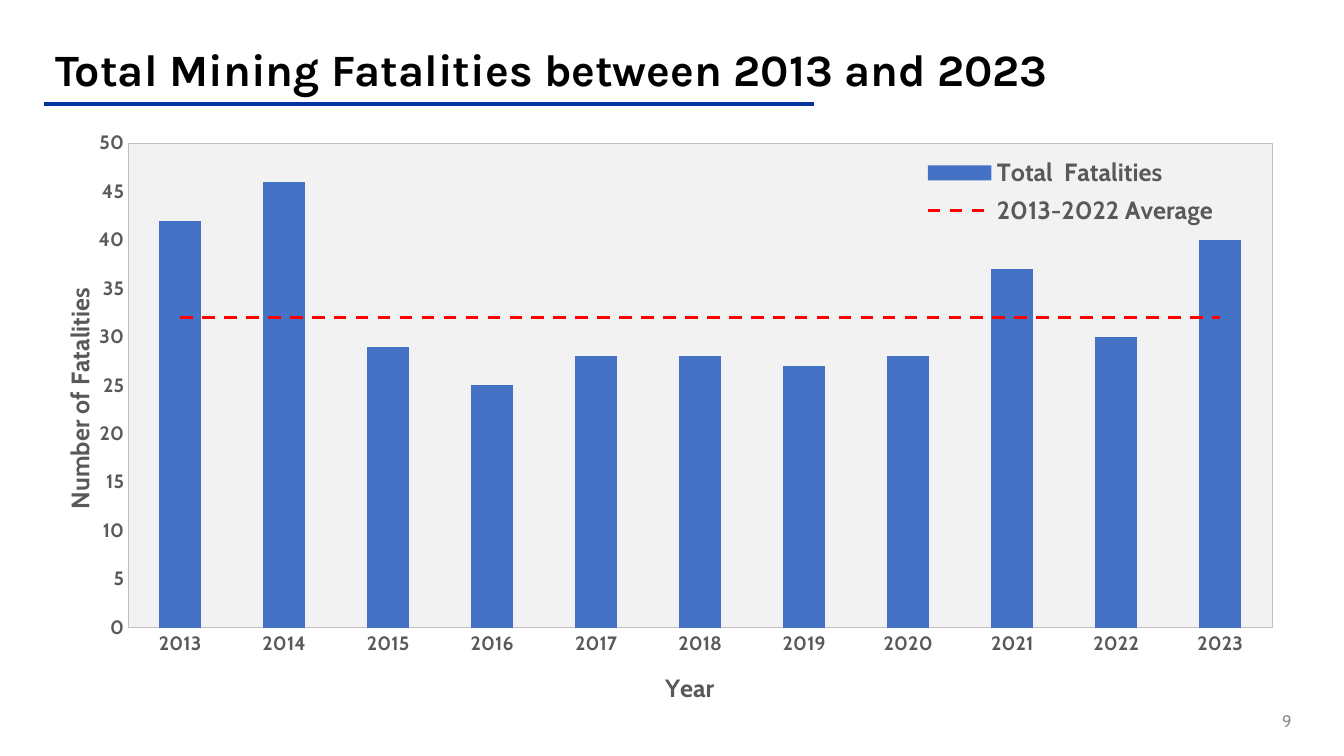
import pptx
import pptx.chart.data
import pptx.dml.color
import pptx.enum.chart
import pptx.enum.dml
import pptx.enum.shapes
import pptx.enum.text
import pptx.oxml
import pptx.oxml.ns
import pptx.util

Inches = pptx.util.Inches
Pt = pptx.util.Pt
qn = pptx.oxml.ns.qn
RGBColor = pptx.dml.color.RGBColor
Align = pptx.enum.text.PP_ALIGN

BLACK = RGBColor(0x00, 0x00, 0x00)
NAVY = RGBColor(0x00, 0x33, 0xA0)
BLUE = RGBColor(0x44, 0x72, 0xC4)
RED = RGBColor(0xFF, 0x00, 0x00)
DARK_GRAY = RGBColor(0x59, 0x59, 0x59)
PAGE_GRAY = RGBColor(0x8C, 0x8C, 0x8C)
LINE_GRAY = RGBColor(0xBF, 0xBF, 0xBF)
PLOT_GRAY = "F2F2F2"

YEARS = [str(year) for year in range(2013, 2024)]
FATALITIES = [42, 46, 29, 25, 28, 28, 27, 28, 37, 30, 40]
AVERAGE = 32


def write(frame, text, size, color, font="Cabin", bold=True, align=None, spacing=None):
    para = frame.paragraphs[0]
    para.alignment = align
    para.line_spacing = spacing
    span = para.add_run()
    span.text = text
    span.font.name = font
    span.font.size = Pt(size)
    span.font.bold = bold
    span.font.color.rgb = color


def place(element, left, top, width=None, height=None):
    """Set the manual layout of a chart part, in fractions of the chart."""
    for layout in element.findall(qn("c:layout")):
        element.remove(layout)
    values = {"xMode": "edge", "yMode": "edge", "x": left, "y": top, "w": width, "h": height}
    if element.tag == qn("c:plotArea"):
        values = {"layoutTarget": "inner", **values}
    items = "".join(f'<c:{key} val="{value}"/>' for key, value in values.items() if value is not None)
    layout = pptx.oxml.parse_xml(
        f'<c:layout {pptx.oxml.ns.nsdecls("c")}><c:manualLayout>{items}</c:manualLayout></c:layout>')
    overlay = element.find(qn("c:overlay"))
    element.insert(0 if overlay is None else element.index(overlay), layout)


deck = pptx.Presentation()
deck.slide_width = Inches(13.33)
deck.slide_height = Inches(7.5)
page = deck.slides.add_slide(deck.slide_layouts[6])

# Rule under the title
rule = page.shapes.add_connector(
    pptx.enum.shapes.MSO_CONNECTOR.STRAIGHT, Inches(0.44), Inches(1.03), Inches(8.07), Inches(1.03))
rule.line.color.rgb = NAVY
rule.line.width = Pt(3)
rule._element.spPr.append(pptx.oxml.parse_xml(f'<a:effectLst {pptx.oxml.ns.nsdecls("a")}/>'))

# Title and page number
labels = [
    ((0.45, 0.4, 12.43, 0.63), "Total Mining Fatalities between 2013 and 2023",
     dict(size=32, color=BLACK, font="Karla", spacing=0.9)),
    ((12.31, 6.95, 0.6, 0.4), "9",
     dict(size=12, color=PAGE_GRAY, bold=False, align=Align.RIGHT)),
]
for position, text, style in labels:
    box = page.shapes.add_textbox(*map(Inches, position))
    box.text_frame.word_wrap = True
    box.text_frame.vertical_anchor = pptx.enum.text.MSO_ANCHOR.MIDDLE
    write(box.text_frame, text, **style)

# Column chart
data = pptx.chart.data.CategoryChartData()
data.categories = YEARS
data.add_series("Total  Fatalities", FATALITIES)
data.add_series("2013-2022 Average", [AVERAGE] * len(YEARS))
chart = page.shapes.add_chart(
    pptx.enum.chart.XL_CHART_TYPE.COLUMN_CLUSTERED,
    Inches(0.29), Inches(1.14), Inches(12.75), Inches(5.92), data).chart
chart.has_title = False
chart.font.name = "Cabin"
chart.font.size = Pt(10)
chart.font.bold = True
columns = chart.plots[0]
columns.gap_width = 150
columns.vary_by_categories = False
columns.series[0].format.fill.solid()
columns.series[0].format.fill.fore_color.rgb = BLUE

# Average series moved to a line plot on the same axes
bar_chart = columns._element
average_series = bar_chart.findall(qn("c:ser"))[1]
for flag in average_series.findall(qn("c:invertIfNegative")):
    average_series.remove(flag)
line_chart = pptx.oxml.parse_xml(
    f'<c:lineChart {pptx.oxml.ns.nsdecls("c")}><c:grouping val="standard"/>'
    '<c:varyColors val="0"/><c:marker val="1"/></c:lineChart>')
line_chart.insert(2, average_series)
for axis_id in bar_chart.findall(qn("c:axId")):
    line_chart.append(pptx.oxml.parse_xml(
        f'<c:axId {pptx.oxml.ns.nsdecls("c")} val="{axis_id.get("val")}"/>'))
bar_chart.addnext(line_chart)
average = chart.plots[1].series[0]
average.smooth = False
average.marker.style = pptx.enum.chart.XL_MARKER_STYLE.NONE
average.format.line.color.rgb = RED
average.format.line.width = Pt(2.25)
average.format.line.dash_style = pptx.enum.dml.MSO_LINE.DASH

# Axes
axes = [(chart.category_axis, "Year", 0.491, 0.935),
        (chart.value_axis, "Number of Fatalities", 0.022, 0.29)]
for axis, title, left, top in axes:
    axis.has_major_gridlines = False
    axis.major_tick_mark = axis.minor_tick_mark = pptx.enum.chart.XL_TICK_MARK.NONE
    axis.format.line.color.rgb = LINE_GRAY
    axis.format.line.width = Pt(0.75)
    font = axis.tick_labels.font
    font.name = "Cabin"
    font.size = Pt(14)
    font.bold = True
    font.color.rgb = DARK_GRAY
    write(axis.axis_title.text_frame, title, size=18, color=DARK_GRAY)
    place(axis.axis_title._element, left, top)
chart.value_axis.minimum_scale = 0
chart.value_axis.maximum_scale = 50
chart.value_axis.major_unit = 5

# Legend inside the plot
chart.has_legend = True
legend = chart.legend
legend.position = pptx.enum.chart.XL_LEGEND_POSITION.RIGHT
legend.include_in_layout = True
legend.font.name = "Cabin"
legend.font.size = Pt(18)
legend.font.bold = True
legend.font.color.rgb = DARK_GRAY
place(legend._element, 0.69, 0.06, 0.24, 0.14)

# Plot area
plot_area = chart._chartSpace.chart.plotArea
place(plot_area, 0.077, 0.048, 0.89, 0.821)
plot_area.append(pptx.oxml.parse_xml(
    f'<c:spPr {pptx.oxml.ns.nsdecls("c", "a")}>'
    f'<a:solidFill><a:srgbClr val="{PLOT_GRAY}"/></a:solidFill>'
    f'<a:ln w="9525"><a:solidFill><a:srgbClr val="{LINE_GRAY}"/></a:solidFill></a:ln></c:spPr>'))

deck.save("out.pptx")
